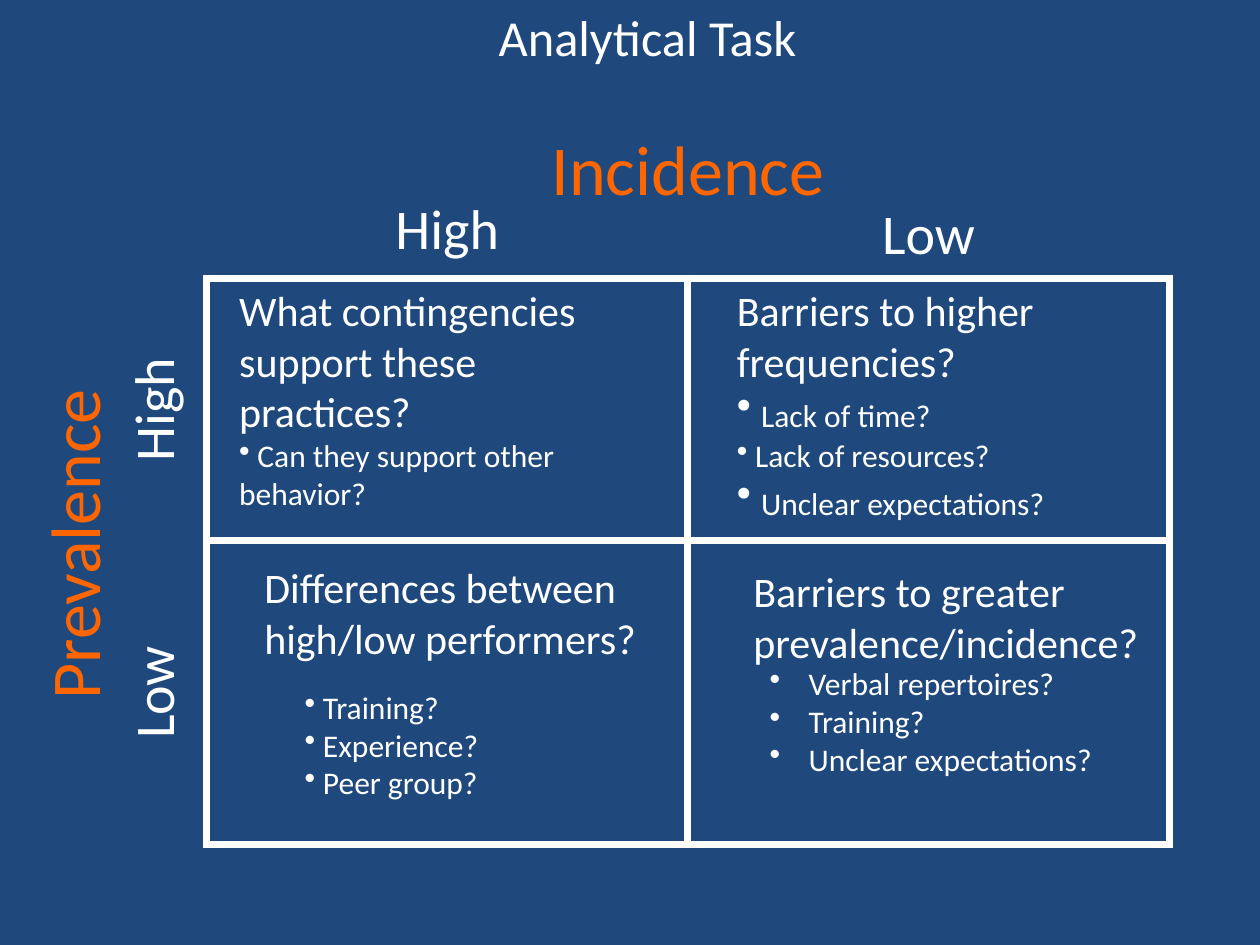
from lxml import etree
from pptx import Presentation
from pptx.dml.color import RGBColor
from pptx.enum.text import MSO_ANCHOR, PP_ALIGN
from pptx.oxml.ns import qn
from pptx.util import Inches, Pt

CENTER, LEFT = PP_ALIGN.CENTER, PP_ALIGN.LEFT
TOP, MIDDLE = MSO_ANCHOR.TOP, MSO_ANCHOR.MIDDLE
NAVY = RGBColor(0x1F, 0x49, 0x7D)
WHITE = RGBColor(0xFF, 0xFF, 0xFF)
ORANGE = RGBColor(0xFF, 0x66, 0x00)
FONT = "Calibri"
HEADING, BULLET = 24, 18

# Matrix grid, in inches
COLUMN_WIDTH = 3.82
ROW_HEIGHTS = [2.08, 2.41]
COLUMN_LEFTS = [1.64, 1.64 + COLUMN_WIDTH]
ROW_TOPS = [2.21, 2.21 + ROW_HEIGHTS[0]]
COLUMN_CENTERS = [left + COLUMN_WIDTH / 2 for left in COLUMN_LEFTS]
ROW_CENTERS = [top + height / 2 for top, height in zip(ROW_TOPS, ROW_HEIGHTS)]
BORDER_WIDTH = 4.5

# Cell texts: column, row, offset in the cell, size, paragraphs.
# A paragraph is (text, size, bullet size); no bullet size means no bullet.
CELL_TEXTS = [
    (1, 0, 0.29, 0, 3.3, 2.32, [
        ("Barriers to higher frequencies?", HEADING, None),
        ("Lack of time?", BULLET, HEADING),
        ("Lack of resources?", BULLET, BULLET),
        ("Unclear expectations?", BULLET, HEADING)]),
    (0, 0, 0.16, 0, 3.34, 1.92, [
        ("What contingencies support these practices?", HEADING, None),
        ("Can they support other behavior?", BULLET, BULLET)]),
    (0, 1, 0.36, 0.12, 3.34, 0.91, [
        ("Differences between", HEADING, None),
        ("high/low performers?", HEADING, None)]),
    (1, 1, 0.42, 0.15, 3.29, 0.91, [
        ("Barriers to greater", HEADING, None),
        ("prevalence/incidence?", HEADING, None)]),
    (0, 1, 0.68, 1.12, 2.61, 1.01, [
        (text, BULLET, BULLET)
        for text in ("Training?", "Experience?", "Peer group?")]),
]
HANGING_ITEMS = ["Verbal repertoires?", "Training?", "Unclear expectations?"]


def add_run(paragraph, text, size, color=WHITE):
    run = paragraph.add_run()
    run.text = text
    for name, value in {"name": FONT, "size": Pt(size)}.items():
        setattr(run.font, name, value)
    run.font.color.rgb = color


def add_bullet(paragraph, margin=0, indent=0):
    properties = paragraph._p.get_or_add_pPr()
    properties.set("marL", str(Inches(margin)))
    properties.set("indent", str(Inches(indent)))
    bullet_color = etree.SubElement(properties, qn("a:buClr"))
    etree.SubElement(bullet_color, qn("a:srgbClr"), val=str(WHITE))
    etree.SubElement(properties, qn("a:buChar"), char="•")


def add_box(slide, left, top, width, height, anchor=TOP):
    shape = slide.shapes.add_textbox(*map(Inches, (left, top, width, height)))
    frame = shape.text_frame
    for name, value in {"word_wrap": True, "vertical_anchor": anchor}.items():
        setattr(frame, name, value)
    return shape


def add_paragraph(frame, index, alignment=LEFT):
    paragraph = frame.paragraphs[0] if index == 0 else frame.add_paragraph()
    paragraph.alignment = alignment
    return paragraph


def add_label(slide, text, center_x, center_y, width, height, size,
              color=WHITE, rotation=0, anchor=TOP):
    shape = add_box(slide, center_x - width / 2, center_y - height / 2,
                    width, height, anchor)
    shape.rotation = rotation
    add_run(add_paragraph(shape.text_frame, 0, CENTER), text, size, color)


def add_cell_text(slide, column, row, dx, dy, width, height, paragraphs):
    shape = add_box(slide, COLUMN_LEFTS[column] + dx, ROW_TOPS[row] + dy,
                    width, height)
    for index, (text, size, bullet_size) in enumerate(paragraphs):
        paragraph = add_paragraph(shape.text_frame, index)
        if bullet_size:
            add_bullet(paragraph)
            # The space after the bullet sets the bullet's size
            add_run(paragraph, " ", bullet_size)
        add_run(paragraph, text, size)


def add_hanging_list(slide, items, column, row, dx, dy, width, height):
    shape = add_box(slide, COLUMN_LEFTS[column] + dx, ROW_TOPS[row] + dy,
                    width, height)
    for index, text in enumerate(items):
        paragraph = add_paragraph(shape.text_frame, index)
        paragraph.level = 1
        add_bullet(paragraph, margin=0.81, indent=-0.31)
        add_run(paragraph, text, BULLET)


def set_borders(cell):
    properties = cell._tc.get_or_add_tcPr()
    for side in ("lnL", "lnR", "lnT", "lnB"):
        line = etree.SubElement(properties, qn(f"a:{side}"),
                                w=str(Pt(BORDER_WIDTH)))
        fill = etree.SubElement(line, qn("a:solidFill"))
        etree.SubElement(fill, qn("a:srgbClr"), val=str(WHITE))


def add_matrix(slide):
    table = slide.shapes.add_table(
        2, 2, Inches(COLUMN_LEFTS[0]), Inches(ROW_TOPS[0]),
        Inches(2 * COLUMN_WIDTH), Inches(sum(ROW_HEIGHTS))).table
    for name in ("first_row", "horz_banding"):
        setattr(table, name, False)
    for column in table.columns:
        column.width = Inches(COLUMN_WIDTH)
    for row, height in zip(table.rows, ROW_HEIGHTS):
        row.height = Inches(height)
    for cell in table.iter_cells():
        set_borders(cell)
        cell.fill.background()


def main():
    presentation = Presentation()
    presentation.slide_width, presentation.slide_height = Inches(10), Inches(7.5)
    slide = presentation.slides.add_slide(presentation.slide_layouts[6])
    slide.background.fill.solid()
    slide.background.fill.fore_color.rgb = NAVY

    # Title and matrix
    add_label(slide, "Analytical Task", 5.14, 0.285, 9, 0.57, 28.8, anchor=MIDDLE)
    add_matrix(slide)

    # Row and column levels
    for text, center in zip(("High", "Low"), ROW_CENTERS):
        add_label(slide, text, 1.21, center, 1.48, 0.64, 32, rotation=270)
    for text, center, middle in zip(("High", "Low"), COLUMN_CENTERS, (1.81, 1.85)):
        add_label(slide, text, center, middle, 1.48, 0.64, 32)

    # Cell contents
    for cell_text in CELL_TEXTS:
        add_cell_text(slide, *cell_text)
    add_hanging_list(slide, HANGING_ITEMS, 1, 1, 0.05, 0.93, 3.78, 1.01)

    # Axis names
    add_label(slide, "Incidence", COLUMN_LEFTS[1], 1.33, 2.99, 0.77, 40, ORANGE)
    add_label(slide, "Prevalence", 0.58, 4.32, 2.99, 0.77, 40, ORANGE, 270)

    presentation.save("out.pptx")


if __name__ == "__main__":
    main()
